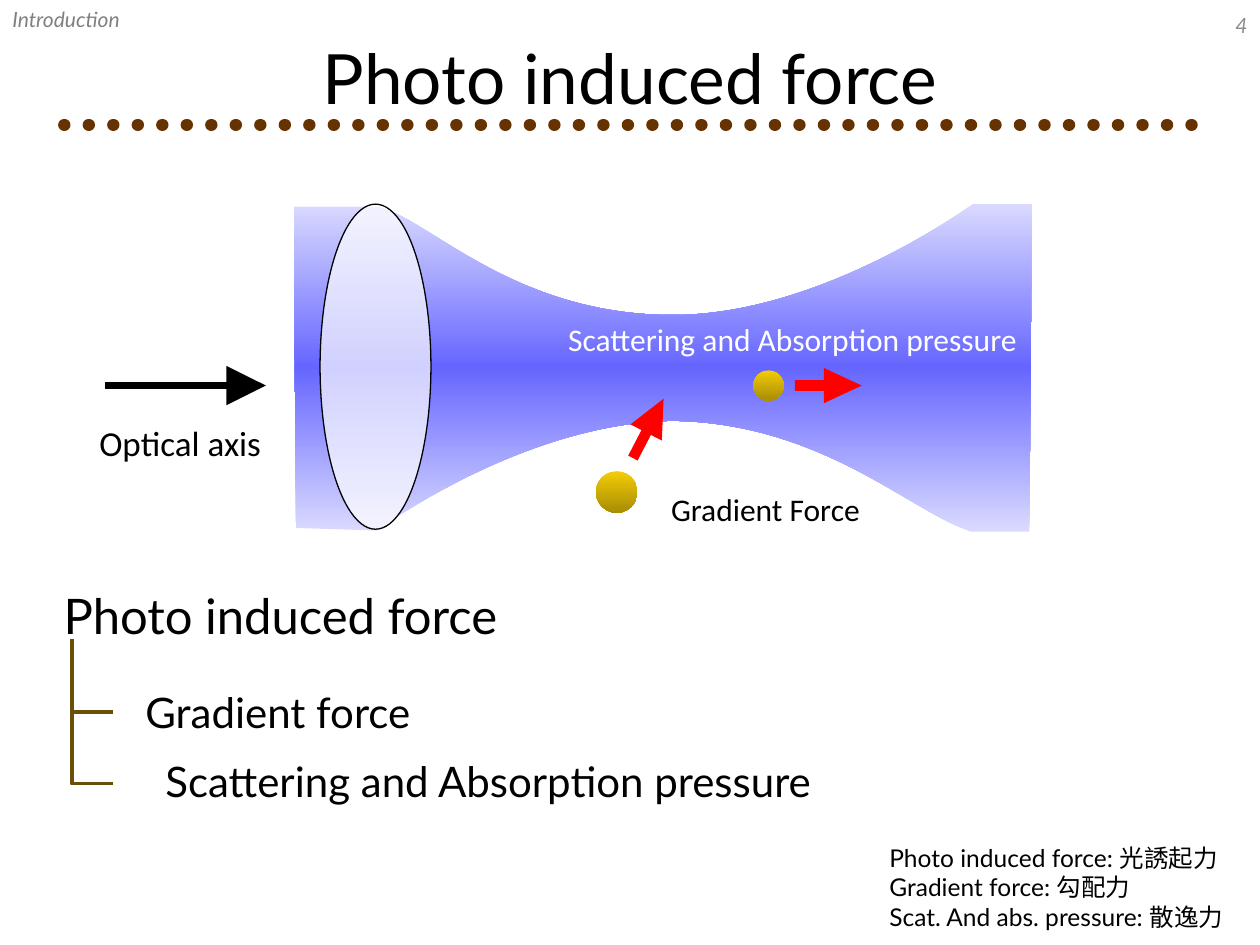
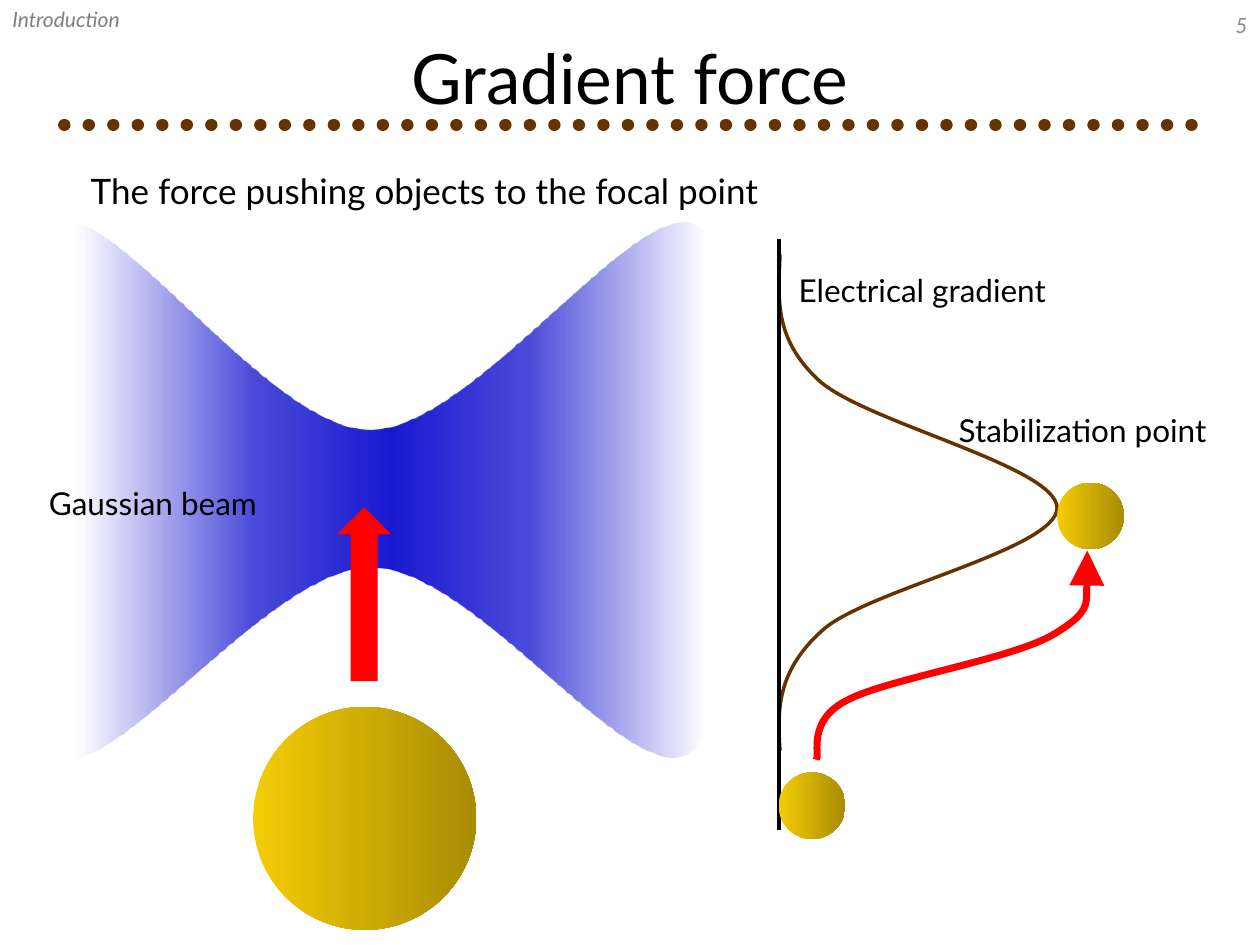
import math

import pptx
import pptx.dml.color
import pptx.enum.dml
import pptx.enum.shapes
import pptx.enum.text
import pptx.oxml.ns
import pptx.util
from lxml import etree

WIDTH, HEIGHT = 10, 7.5
BLACK, WHITE, RED = "000000", "FFFFFF", "FF0000"
BROWN, OLIVE = "663300", "695008"
GOLD = [(0, "F4CC06", 100), (100, "A88C04", 100)]
BEAM_GLOW = [(0, "D9D9FF", 100), (50, "6666FF", 100), (100, "D9D9FF", 100)]
FOCUS_GLOW = [(at, "0000CC", alpha)
              for at, alpha in [(5, 0), (30, 70), (50, 90), (70, 70), (95, 0)]]
DOWNWARD = 270  # gradient direction, counter-clockwise
SECTION = "Introduction"

# Outlines: frame, rotation, then a start point followed by
# corners (2 numbers) or Bézier curves (6 numbers)
LENS_BEAM = (2.33, 1.62, 5.85, 2.59), 0, [
    (2.99, 1.64),
    (3.38, 1.71, 4.05, 2.5, 5.34, 2.5), (6.53, 2.5, 7.72, 1.62, 7.72, 1.62),
    (8.19, 1.62), (8.17, 4.22), (7.71, 4.22),
    (7.24, 4.07, 6.53, 3.36, 5.35, 3.34), (4.15, 3.35, 2.99, 4.21, 2.99, 4.21),
    (2.35, 4.19), (2.33, 1.64), (2.99, 1.64),
]
GAUSSIAN_BEAM = (0.96, 1.13, 4.29, 5.52), 270, [
    (0.35, 5.96),
    (0.78, 6.42, 2.08, 4.51, 2.94, 4.5), (3.8, 4.5, 5.07, 6.39, 5.51, 5.94),
    (5.94, 5.49, 6, 2.24, 5.57, 1.82), (5.15, 1.4, 3.79, 3.4, 2.94, 3.41),
    (2.09, 3.41, 0.78, 1.37, 0.35, 1.8), (-0.08, 2.23, -0.08, 5.51, 0.35, 5.96),
]
FIELD_PROFILE = (5.31, 2.89, 3.94, 2.2), 90, [
    (6.19, 2.02),
    (6.18, 2.35, 6.13, 2.68, 6.5, 3.02), (6.86, 3.35, 8.38, 3.7, 8.39, 4.03),
    (8.39, 4.36, 6.89, 4.68, 6.53, 5), (6.16, 5.33, 6.17, 5.64, 6.19, 5.96),
]
PARTICLE_ROUTE = (6.48, 4.37, 2.16, 1.67), 0, [
    (6.48, 6.03),
    (6.51, 6, 6.4, 5.72, 6.72, 5.56), (7.03, 5.39, 8.05, 5.23, 8.37, 5.03),
    (8.69, 4.84, 8.64, 4.45, 8.63, 4.37),
]

# Labels: text, box, size, font, colour, alignment
FORCE_LABELS = [
    ("Gradient Force", (5.1, 3.84, 1.95, 0.4), 18, "Calibri", BLACK, "c"),
    ("Scattering and Absorption pressure", (4.32, 2.49, 3.94, 0.4), 18, "Calibri", WHITE, "c"),
    ("Optical axis", (0.57, 3.3, 1.72, 0.43), 20, "Calibri", BLACK, "c"),
    ("Photo induced force", (0.24, 4.6, 3.97, 0.57), 28, "Lato", BLACK, "c"),
    ("Gradient force", (0.91, 5.4, 2.59, 0.5), 24, "Lato", BLACK, "c"),
    ("Scattering and Absorption pressure", (0.91, 5.95, 5.93, 0.5), 24, "Lato", BLACK, "c"),
    ("Photo induced force: 光誘起力\nGradient force: 勾配力\nScat. And abs. pressure: 散逸力",
     (6.96, 6.64, 3.09, 0.81), 14, "Lato", BLACK, "l"),
]
GRADIENT_LABELS = [
    ("The force pushing objects to the focal point", (0.31, 1.3, 6.12, 0.43), 20, "Lato", BLACK, "c"),
    ("Stabilization point", (7.51, 3.21, 2.45, 0.4), 18, "Lato", BLACK, "l"),
    ("Electrical gradient", (6.24, 2.1, 2.46, 0.4), 18, "Lato", BLACK, "l"),
    ("Gaussian beam", (0.29, 3.79, 1.97, 0.4), 18, "Lato", BLACK, "l"),
]
FORCE_BEADS = [(4.73, 3.74, 0.33), (5.98, 2.94, 0.24)]
FORCE_ARROWS = [((4.88, 3.26, 0.53, 0.28), 297.3), ((6.31, 2.92, 0.53, 0.28), 0)]
TREE_LEFT, TREE_TOP, TREE_STEP = 0.57, 5.07, 0.57
TREE_ARM, TREE_DROP = 0.33, 0.58

SHAPE = pptx.enum.shapes.MSO_SHAPE
ALIGN = {"l": pptx.enum.text.PP_ALIGN.LEFT,
         "c": pptx.enum.text.PP_ALIGN.CENTER,
         "r": pptx.enum.text.PP_ALIGN.RIGHT}


def rgb(hex_colour):
    return pptx.dml.color.RGBColor.from_string(hex_colour)


def inches(values):
    return [pptx.util.Inches(value) for value in values]


def add_child(parent, tag, **attributes):
    child = etree.SubElement(parent, pptx.oxml.ns.qn(tag))
    for key, value in attributes.items():
        child.set(key, str(value))
    return child


def find(shape, tag):
    return shape._element.spPr.find(".//" + pptx.oxml.ns.qn(tag))


def clear(element):
    for child in list(element):
        element.remove(child)


def paint(shape, fill=None, line=None, width=1, alpha=100):
    """Fill with a colour, a list of gradient stops or nothing, and set the outline."""
    shape.shadow.inherit = False
    if fill is None:
        shape.fill.background()
    elif isinstance(fill, str):
        shape.fill.solid()
        shape.fill.fore_color.rgb = rgb(fill)
        if alpha < 100:
            add_child(find(shape, "a:srgbClr"), "a:alpha", val=alpha * 1000)
    else:
        shape.fill.gradient()
        shape.fill.gradient_angle = DOWNWARD
        stops = find(shape, "a:gsLst")
        clear(stops)
        for at, hex_colour, opacity in fill:
            stop = add_child(stops, "a:gs", pos=at * 1000)
            colour = add_child(stop, "a:srgbClr", val=hex_colour)
            if opacity < 100:
                add_child(colour, "a:alpha", val=opacity * 1000)
    if line:
        stroke(shape, line, width)
    else:
        shape.line.fill.background()
    return shape


def stroke(shape, colour, width):
    shape.line.color.rgb = rgb(colour)
    shape.line.width = pptx.util.Pt(width)


def add_arrowhead(shape):
    add_child(find(shape, "a:ln"), "a:tailEnd", type="triangle", w="lg", len="lg")


def add_line(slide, start, end, colour, width):
    connector = slide.shapes.add_connector(
        pptx.enum.shapes.MSO_CONNECTOR.STRAIGHT, *inches(start + end))
    stroke(connector, colour, width)
    add_child(connector._element.spPr, "a:effectLst")
    return connector


def add_preset(slide, kind, box, fill, rotation=0, **style):
    shape = slide.shapes.add_shape(kind, *inches(box))
    shape.rotation = rotation
    return paint(shape, fill, **style)


def add_bead(slide, left, top, size, rotation=0):
    add_preset(slide, SHAPE.OVAL, (left, top, size, size), GOLD, rotation)


def add_outline(slide, box, rotation, pieces, close=False, **style):
    """Draw corners and Bézier curves, given as they lie on the slide, in a rotated frame."""
    left, top, width, height = box
    middle_x, middle_y = left + width / 2, top + height / 2
    cos, sin = math.cos(math.radians(rotation)), math.sin(math.radians(rotation))

    def in_frame(x, y):
        dx, dy = x - middle_x, y - middle_y
        return inches((dx * cos + dy * sin + width / 2, dy * cos - dx * sin + height / 2))

    builder = slide.shapes.build_freeform(*inches(pieces[0]))
    builder.add_line_segments([inches(piece[-2:]) for piece in pieces[1:]], close=close)
    shape = builder.convert_to_shape()
    shape.left, shape.top, shape.width, shape.height = inches(box)
    shape.rotation = rotation
    route = find(shape, "a:path")
    clear(route)
    route.set("w", str(shape.width))
    route.set("h", str(shape.height))
    for index, piece in enumerate(pieces):
        tag = "a:moveTo" if index == 0 else "a:lnTo" if len(piece) == 2 else "a:cubicBezTo"
        segment = add_child(route, tag)
        for x, y in zip(piece[::2], piece[1::2]):
            across, down = in_frame(x, y)
            add_child(segment, "a:pt", x=int(across), y=int(down))
    if close:
        add_child(route, "a:close")
    return paint(shape, **style)


def add_text(slide, text, box, size, font="Lato", colour=BLACK, align="l",
             middle=False, italic=False, wrap=False):
    frame = slide.shapes.add_textbox(*inches(box)).text_frame
    frame.text = text
    frame.word_wrap = wrap
    if not wrap:
        frame.auto_size = pptx.enum.text.MSO_AUTO_SIZE.SHAPE_TO_FIT_TEXT
    if middle:
        frame.vertical_anchor = pptx.enum.text.MSO_ANCHOR.MIDDLE
    for paragraph in frame.paragraphs:
        paragraph.alignment = ALIGN[align]
        for run in paragraph.runs:
            run.font.size = pptx.util.Pt(size)
            run.font.name = font
            run.font.italic = italic
            run.font.color.rgb = rgb(colour)


def add_titled_slide(deck, title, number):
    """Add a slide with the dotted rule, title, page number and section name."""
    slide = deck.slides.add_slide(deck.slide_layouts[6])
    rule = add_line(slide, (0.51, 0.99), (WIDTH - 0.51, 0.99), BROWN, 7)
    rule.line.dash_style = pptx.enum.dml.MSO_LINE.ROUND_DOT
    find(rule, "a:ln").set("cap", "rnd")
    add_text(slide, title, (0.5, 0.22, WIDTH - 1, 0.78), 39.6,
             align="c", middle=True, wrap=True)
    add_text(slide, str(number), (7.67, 0, 2.33, 0.4), 12, colour="8C8C8C",
             align="r", middle=True, italic=True, wrap=True)
    add_text(slide, SECTION, (0, 0, 2.36, 0.44), 12, colour="808080",
             italic=True, wrap=True)
    return slide


def build_photo_induced_force(deck):
    slide = add_titled_slide(deck, "Photo induced force", 4)
    add_outline(slide, *LENS_BEAM, close=True, fill=BEAM_GLOW)
    add_preset(slide, SHAPE.OVAL, (2.54, 1.62, 0.88, 2.58), WHITE,
               line=BLACK, width=0.75, alpha=70)
    for bead in FORCE_BEADS:
        add_bead(slide, *bead)
    for box, rotation in FORCE_ARROWS:
        arrow = add_preset(slide, SHAPE.RIGHT_ARROW, box, RED, rotation)
        arrow.adjustments[0], arrow.adjustments[1] = 0.3, 1.075
    for label in FORCE_LABELS[:3]:
        add_text(slide, *label)
    add_arrowhead(add_line(slide, (0.83, 3.06), (2.11, 3.06), BLACK, 4.5))
    for label in FORCE_LABELS[3:]:
        add_text(slide, *label)
    for branch in range(2):
        top = TREE_TOP + branch * TREE_STEP
        bottom, right = top + TREE_DROP, TREE_LEFT + TREE_ARM
        add_outline(slide, (TREE_LEFT, top, TREE_ARM, TREE_DROP), 0,
                    [(TREE_LEFT, top), (TREE_LEFT, bottom), (right, bottom)],
                    line=OLIVE, width=2)


def build_gradient_force(deck):
    slide = add_titled_slide(deck, "Gradient force", 5)
    add_outline(slide, *GAUSSIAN_BEAM, close=True, fill=FOCUS_GLOW)
    add_bead(slide, 2.01, 5.61, 1.77, 270)
    add_preset(slide, SHAPE.RIGHT_ARROW, (2.2, 4.5, 1.38, 0.43), RED, 270)
    add_outline(slide, *FIELD_PROFILE, line=BROWN, width=2)
    add_line(slide, (6.18, 1.9), (6.18, 6.59), BLACK, 2.25)
    add_bead(slide, 6.18, 6.13, 0.53, 270)
    add_arrowhead(add_outline(slide, *PARTICLE_ROUTE, line=RED, width=4))
    add_bead(slide, 8.39, 3.83, 0.53, 270)
    for label in GRADIENT_LABELS:
        add_text(slide, *label)


def main():
    deck = pptx.Presentation()
    deck.slide_width, deck.slide_height = inches((WIDTH, HEIGHT))
    build_photo_induced_force(deck)
    build_gradient_force(deck)
    deck.save("out.pptx")


if __name__ == "__main__":
    main()
